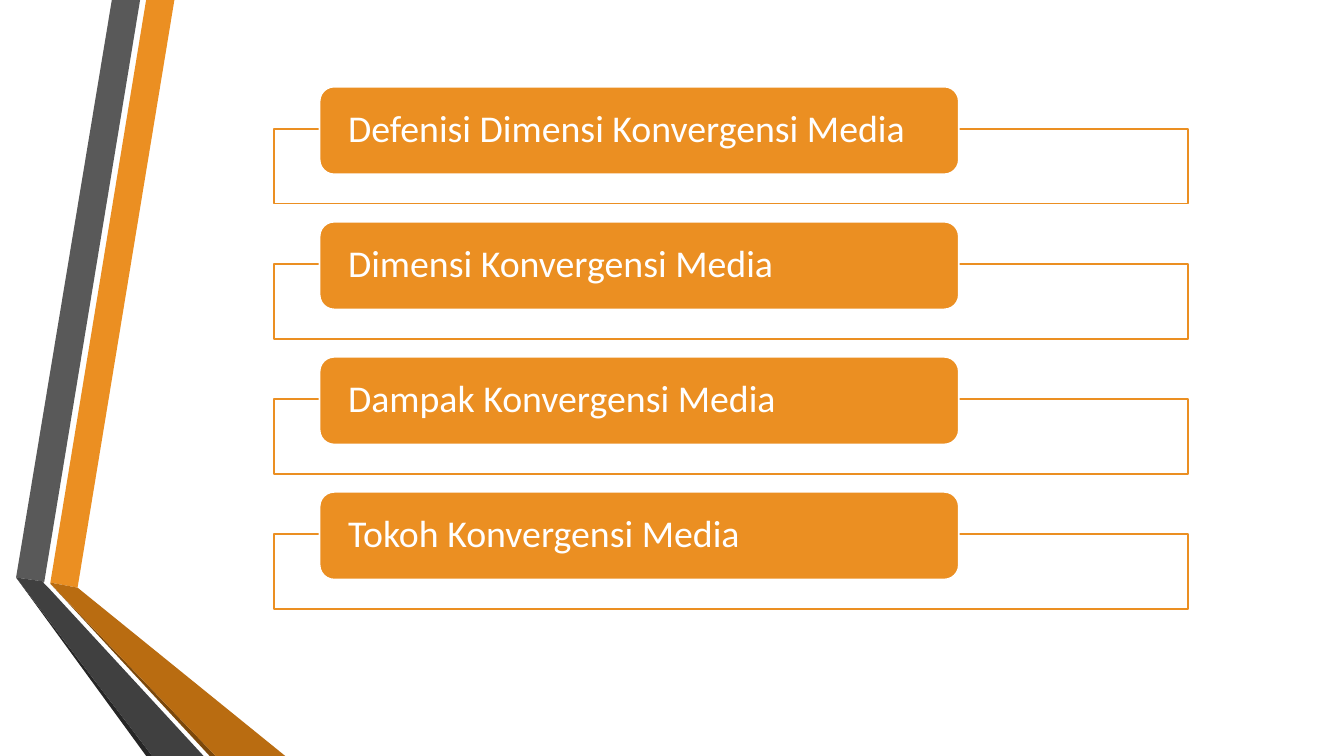
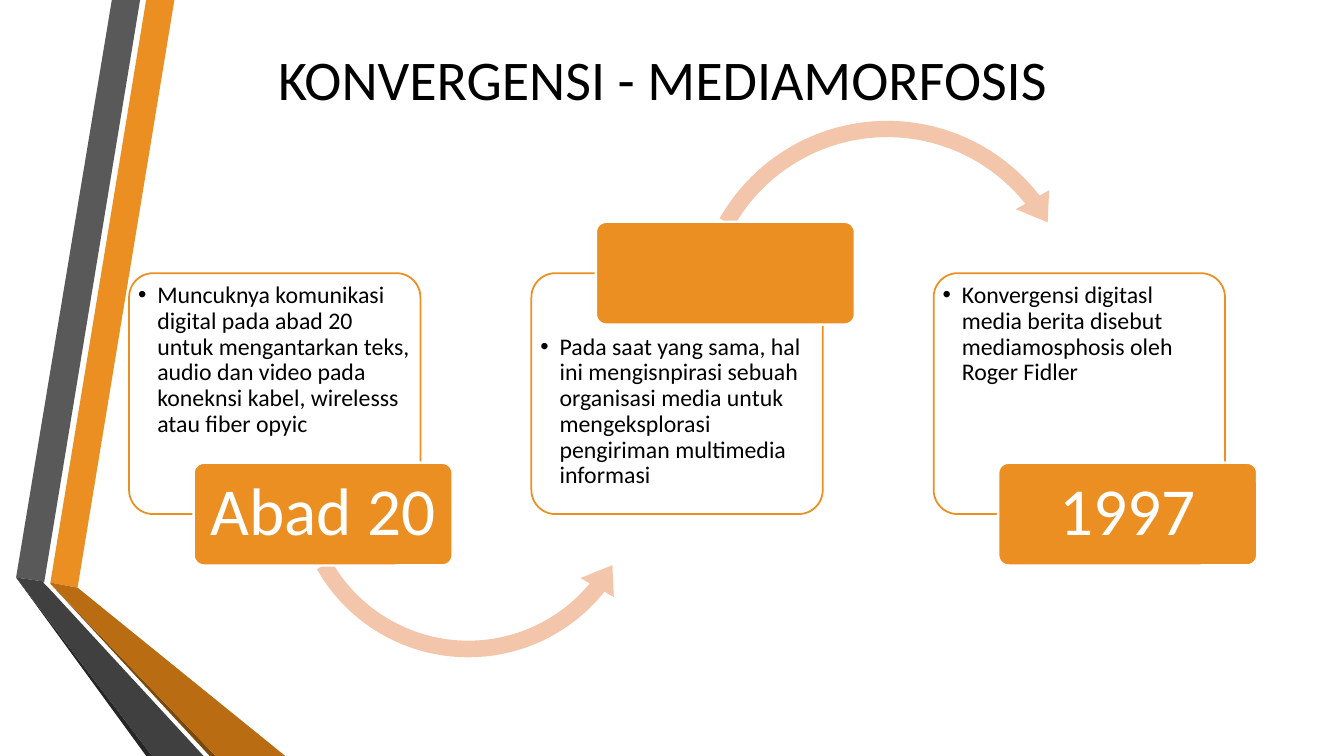
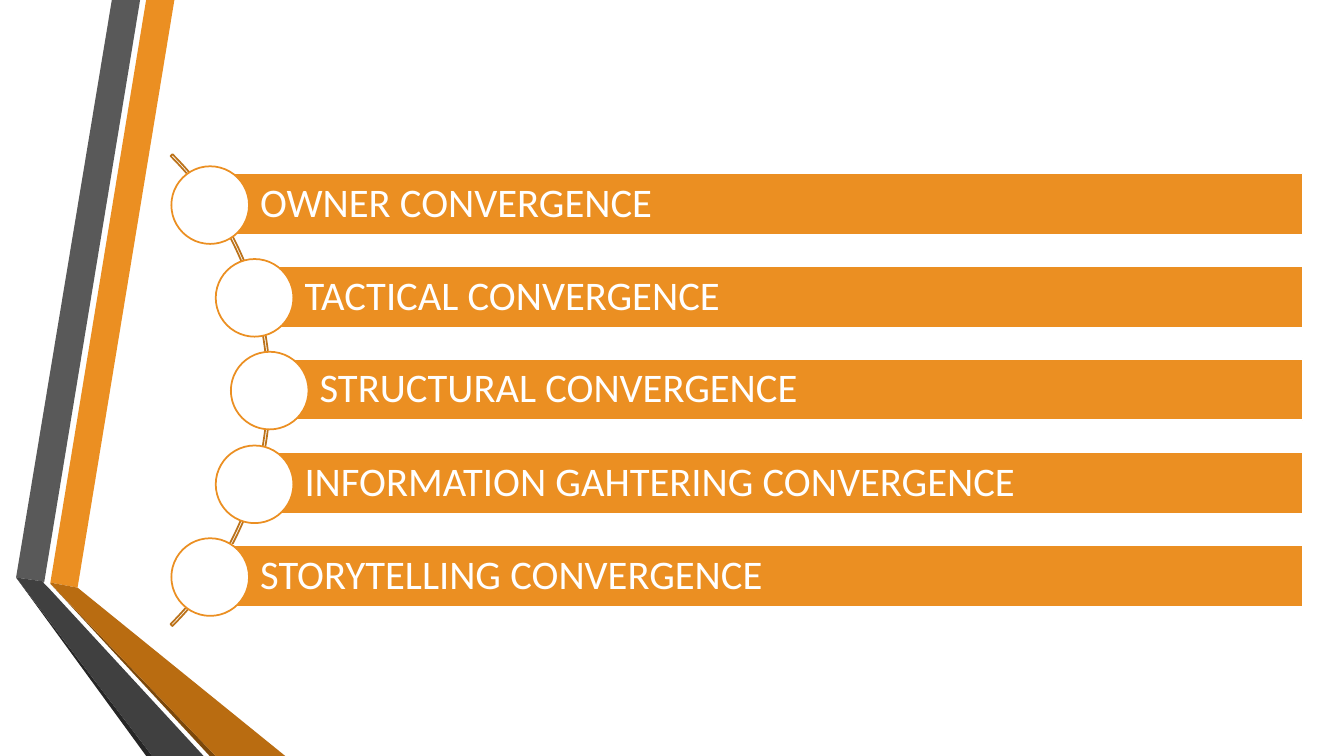
from lxml.etree import SubElement
from pptx import Presentation
from pptx.dml.color import RGBColor
from pptx.enum.shapes import MSO_SHAPE as Kind
from pptx.enum.text import MSO_ANCHOR as Anchor, PP_ALIGN as Align
from pptx.oxml.ns import qn
from pptx.util import Pt

PX = 9144  # 100 px to the inch
WIDE, HIGH = 1333, 750
FONT = "Calibri"
ORANGE, WHITE, BLACK = "EB8F22", "FFFFFF", "000000"
PEACH, BROWN = "F3C6AC", "BC731B"

# Folded ribbons at the left edge: colour and corners
BANDS = [
    (ORANGE, [(50, 578), (77, 583), (173, 0), (145, 0)]),
    ("595959", [(139, 0), (111, 0), (16, 573), (44, 577)]),
    ("262626", [(16, 573), (145, 750), (151, 750)]),
    ("7B480B", [(50, 579), (208, 750), (214, 750)]),
    ("B96C11", [(50, 578), (50, 579), (214, 750), (283, 750), (77, 583)]),
    ("404040", [(16, 573), (151, 750), (202, 750), (48, 583), (43, 578), (44, 577)]),
]

TOPICS = [
    "Defenisi Dimensi Konvergensi Media",
    "Dimensi Konvergensi Media",
    "Dampak Konvergensi Media",
    "Tokoh Konvergensi Media",
]

# Text of each stage, its label, and whether the label sits on top
STAGES = [
    ("Muncuknya komunikasi digital pada abad 20 untuk mengantarkan teks, audio "
     "dan video pada koneknsi kabel, wirelesss atau fiber opyic", "Abad 20", False),
    ("Pada saat yang sama, hal ini mengisnpirasi sebuah organisasi media untuk "
     "mengeksplorasi pengiriman multimedia informasi", "", True),
    ("Konvergensi digitasl media berita disebut mediamosphosis oleh Roger Fidler",
     "1997", False),
]

# Label of each bar and its distance from the left of the list
TYPES = [
    ("OWNER CONVERGENCE", 0),
    ("TACTICAL CONVERGENCE", 44),
    ("STRUCTURAL CONVERGENCE", 59),
    ("INFORMATION GAHTERING CONVERGENCE", 44),
    ("STORYTELLING CONVERGENCE", 0),
]


def rgb(code):
    return RGBColor.from_string(code)


def paint(shape, fill=None, line=None, width=1.25, alpha=None):
    shape.shadow.inherit = False
    if fill:
        shape.fill.solid()
        shape.fill.fore_color.rgb = rgb(fill)
        if alpha:
            color = shape.fill._xPr.find(qn("a:solidFill"))[0]
            SubElement(color, qn("a:alpha"), val=str(alpha * 1000))
    else:
        shape.fill.background()
    if line:
        shape.line.color.rgb = rgb(line)
        shape.line.width = Pt(width)
    else:
        shape.line.fill.background()


def draw(slide, kind, box, adjust=(), **style):
    shape = slide.shapes.add_shape(kind, *[n * PX for n in box])
    for i, value in enumerate(adjust):
        shape.adjustments[i] = value
    paint(shape, **style)
    return shape


def write(shape, text, size, color, pad, align=Align.LEFT,
          anchor=Anchor.MIDDLE, space=0.9):
    frame = shape.text_frame
    frame.word_wrap = True
    frame.vertical_anchor = anchor
    (frame.margin_left, frame.margin_top,
     frame.margin_right, frame.margin_bottom) = [n * PX for n in pad]
    para = frame.paragraphs[0]
    para.alignment = align
    para.line_spacing = space
    run = para.add_run()
    run.text = text
    run.font.name = FONT
    run.font.size = Pt(size)
    run.font.color.rgb = rgb(color)
    return para


def bullet(para, indent):
    props = para._p.get_or_add_pPr()
    props.set("marL", str(indent * PX))
    props.set("indent", str(-indent * PX))
    SubElement(props, qn("a:buFont"), typeface="Arial")
    SubElement(props, qn("a:buChar"), char="•")


def dress(master, slide):
    """Build the ribbons and hand them to the master."""
    for i, (color, points) in enumerate(BANDS):
        form = slide.shapes.build_freeform(*points[0], scale=PX)
        form.add_line_segments(points[1:], close=True)
        band = form.convert_to_shape()
        paint(band, color)
        master.shapes.element.insert(2 + i, band.element)


def topic(slide, box, text):
    x, y, w, h = box
    draw(slide, Kind.RECTANGLE, (x, y + 42, w, h - 42),
         fill=WHITE, alpha=90, line=ORANGE)
    tab = draw(slide, Kind.ROUNDED_RECTANGLE, (x + 45, y, 634, 87),
               fill=ORANGE, line=WHITE)
    write(tab, text, 27, WHITE, (24, 0, 24, 0))


def heading(slide, box, text):
    title = slide.shapes.title
    title.left, title.top, title.width, title.height = [n * PX for n in box]
    write(title, text, 40, BLACK, (10, 5, 10, 5), Align.CENTER, space=1)


def card(slide, box, text):
    x, y, w, h = box
    note, label, above = text
    frame = draw(slide, Kind.ROUNDED_RECTANGLE, box, [0.1],
                 fill=WHITE, alpha=90, line=ORANGE)
    pad = (2, 54 if above else 3, 3, 3)
    bullet(write(frame, note, 17, BLACK, pad, anchor=Anchor.TOP), 19)
    top = y - 51 if above else y + h - 51
    tab = draw(slide, Kind.ROUNDED_RECTANGLE, (x + 64, top, 257, 102), [0.1],
               fill=ORANGE, line=WHITE, width=1.75)
    if label:
        write(tab, label, 48, WHITE, (10, 7, 10, 7), Align.CENTER)


def flow(slide, box):
    x, y, w, h = box
    # Arrows lie behind the cards
    draw(slide, Kind.LEFT_CIRCULAR_ARROW, (x + 153, y + 25, 367, 367),
         [0.045, 5.652, 23.408, 90.245, 0.052], fill=PEACH)
    draw(slide, Kind.CIRCULAR_ARROW, (x + 550, y - 162, 404, 404),
         [0.04, 5.084, 193.16, 125.755, 0.047], fill=PEACH)
    wide = 289
    step = (w - wide) // (len(STAGES) - 1)
    for i, stage in enumerate(STAGES):
        card(slide, (x + i * step, y, wide, h), stage)


def curve(slide, box):
    x, y, w, h = box
    draw(slide, Kind.BLOCK_ARC, (x - 603, y - 116, 662, 662),
         [189, 27, 0.004], line=BROWN)
    tall, size = 61, 77
    step = (h - tall) / (len(TYPES) - 1)
    for i, (text, shift) in enumerate(TYPES):
        left, top = x + shift, y + round(i * step)
        bar = draw(slide, Kind.RECTANGLE, (left, top, w - shift, tall),
                   fill=ORANGE, line=WHITE)
        write(bar, text, 29, WHITE, (49, 8, 8, 8))
        draw(slide, Kind.OVAL, (left - size // 2 - 1, top - size // 2 + 31, size, size),
             fill=WHITE, line=ORANGE)


def main():
    deck = Presentation()
    deck.slide_width, deck.slide_height = WIDE * PX, HIGH * PX
    titled, blank = deck.slide_layouts[5], deck.slide_layouts[6]

    # Topics
    slide = deck.slides.add_slide(blank)
    dress(deck.slide_master, slide)
    for i, text in enumerate(TOPICS):
        topic(slide, (272, 86 + i * 134, 906, 116), text)

    # Stages
    slide = deck.slides.add_slide(titled)
    heading(slide, (109, 32, 1096, 91), "KONVERGENSI - MEDIAMORFOSIS")
    flow(slide, (128, 271, 1087, 239))

    # Types
    slide = deck.slides.add_slide(blank)
    curve(slide, (209, 172, 1083, 430))

    deck.save("out.pptx")


if __name__ == "__main__":
    main()
